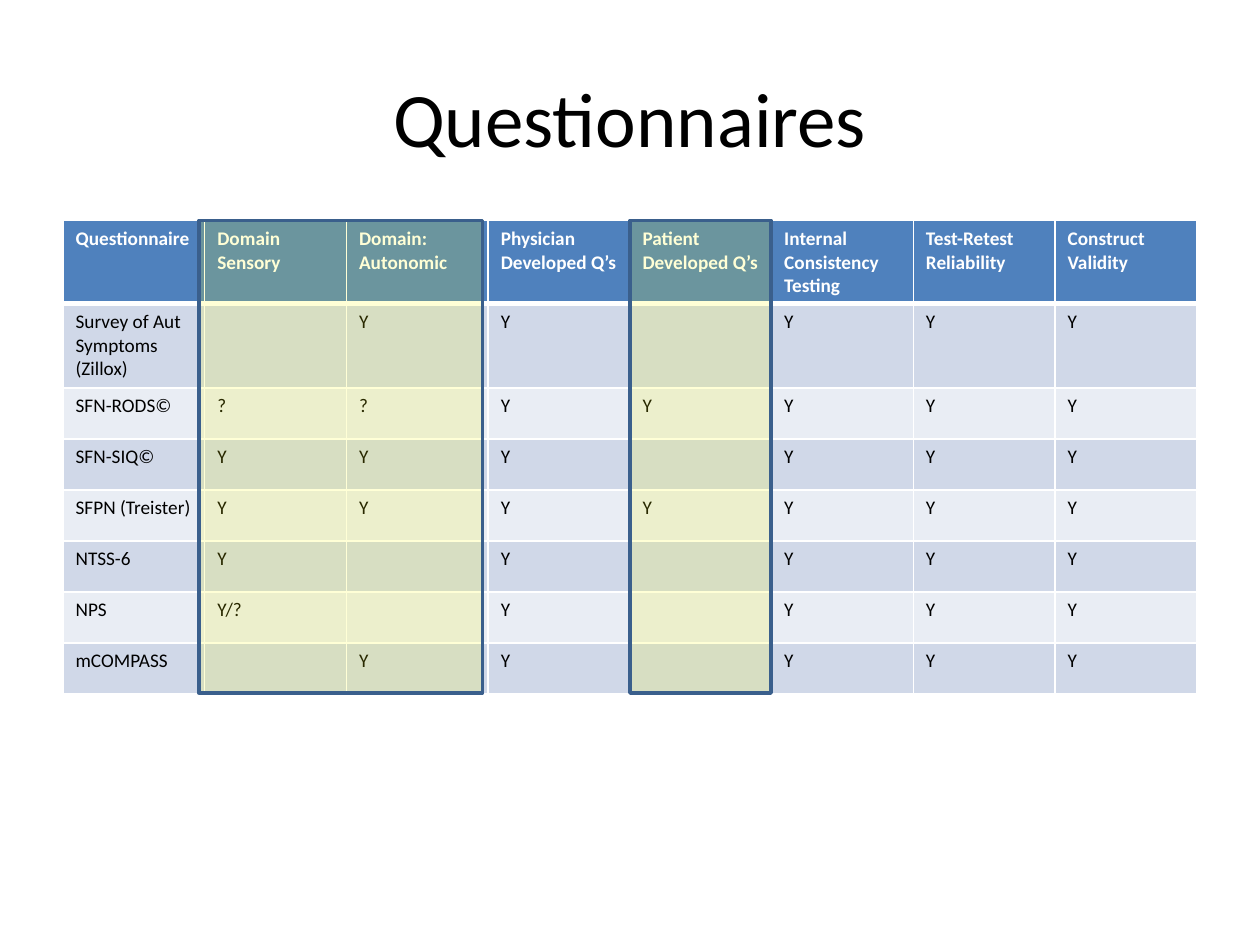
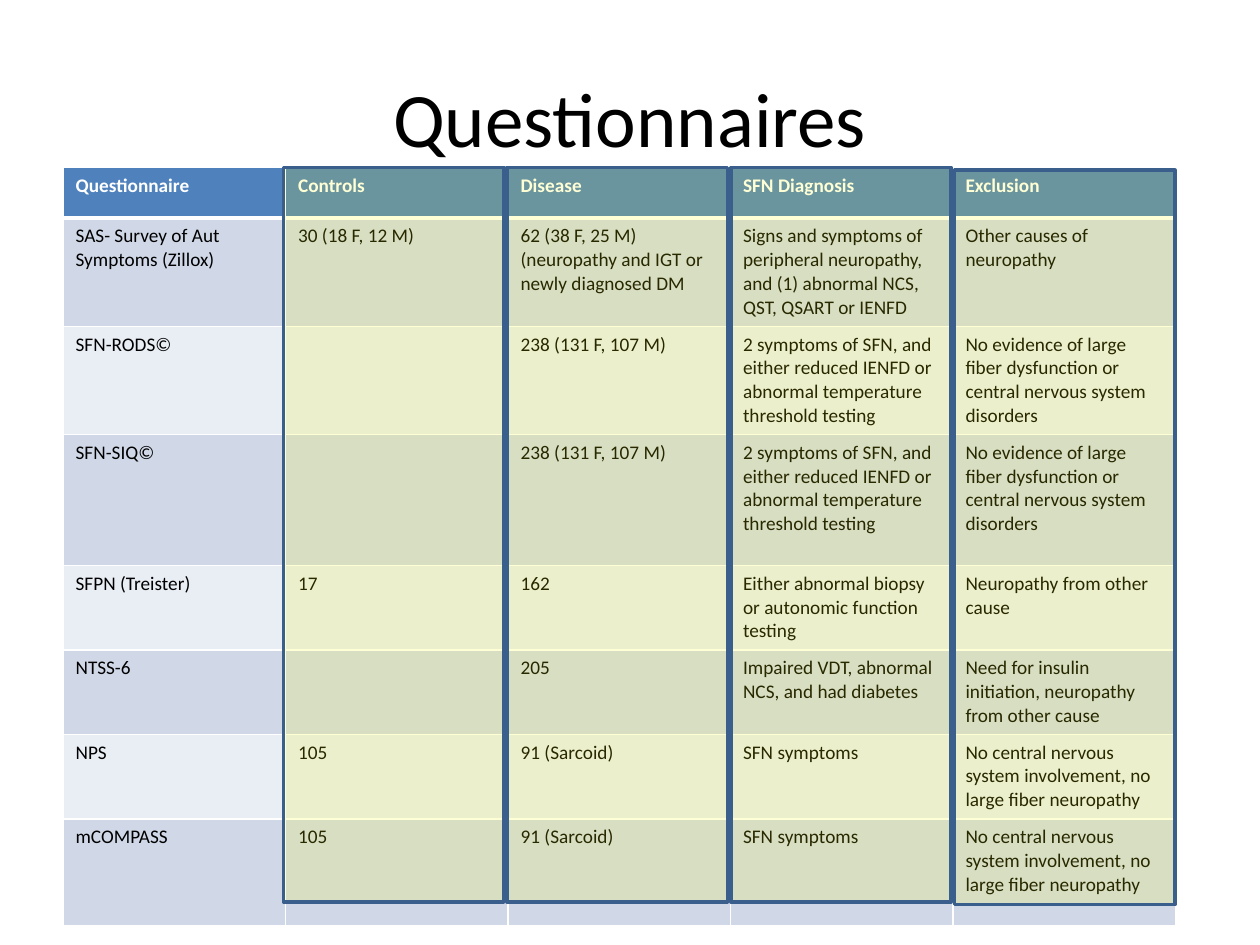
from dataclasses import dataclass

from lxml.etree import SubElement
from pptx import Presentation
from pptx.dml.color import RGBColor
from pptx.enum.shapes import MSO_SHAPE
from pptx.enum.text import MSO_ANCHOR, PP_ALIGN
from pptx.oxml.ns import qn
from pptx.util import Inches, Pt

FONT = "Calibri"
COLORS = {
    "text": "000000",
    "white": "FFFFFF",
    "header": "4F81BD",
    "odd_row": "D0D8E8",
    "even_row": "E9EDF4",
    "highlight": "FFFF00",
    "frame": "3A5F8C",
}
HIGHLIGHT_OPACITY = 16


@dataclass
class Grid:
    top: float
    width: float
    row_heights: list[float]
    rows: list[list[str]]
    left: float = 0.5


@dataclass
class Highlight:
    left: float
    top: float
    width: float
    height: float


def rgb(name: str) -> RGBColor:
    return RGBColor.from_string(COLORS[name])


def style_font(p, size: float, color: str, bold: bool = False) -> None:
    p.font.name = FONT
    p.font.size = Pt(size)
    p.font.bold = bold
    p.font.color.rgb = rgb(color)


def add_title(s, text: str) -> None:
    box = s.shapes.add_textbox(Inches(0.5), Inches(0.3), Inches(9), Inches(1.25))
    tf = box.text_frame
    tf.word_wrap = True
    tf.vertical_anchor = MSO_ANCHOR.MIDDLE
    p = tf.paragraphs[0]
    p.text = text
    p.alignment = PP_ALIGN.CENTER
    style_font(p, 44, "text")


def set_borders(cell, top: float, bottom: float) -> None:
    """Give the cell white borders, 1 pt at the sides; call before filling it."""
    tc_pr = cell._tc.get_or_add_tcPr()
    for side, width in {"L": 1, "R": 1, "T": top, "B": bottom}.items():
        ln = SubElement(tc_pr, qn(f"a:ln{side}"), w=str(Pt(width)))
        fill = SubElement(ln, qn("a:solidFill"))
        SubElement(fill, qn("a:srgbClr"), val=COLORS["white"])


def add_grid(s, grid: Grid) -> None:
    n_cols = len(grid.rows[0])
    frame = s.shapes.add_table(
        len(grid.rows), n_cols, Inches(grid.left), Inches(grid.top),
        Inches(grid.width), Inches(sum(grid.row_heights)))
    table = frame.table
    for column in table.columns:
        column.width = Inches(grid.width / n_cols)
    for i, (height, texts) in enumerate(zip(grid.row_heights, grid.rows)):
        table.rows[i].height = Inches(height)
        is_header = i == 0
        band = "header" if is_header else "odd_row" if i % 2 else "even_row"
        for j, text in enumerate(texts):
            cell = table.cell(i, j)
            set_borders(cell, top=3 if i == 1 else 1, bottom=3 if is_header else 1)
            cell.fill.solid()
            cell.fill.fore_color.rgb = rgb(band)
            p = cell.text_frame.paragraphs[0]
            p.text = text
            style_font(p, 11, "white" if is_header else "text", is_header)


def add_highlight(s, area: Highlight) -> None:
    sp = s.shapes.add_shape(
        MSO_SHAPE.RECTANGLE, Inches(area.left), Inches(area.top),
        Inches(area.width), Inches(area.height))
    sp.shadow.inherit = False
    sp.fill.solid()
    sp.fill.fore_color.rgb = rgb("highlight")
    color = sp.fill._xPr.find(qn("a:solidFill"))[0]
    SubElement(color, qn("a:alpha"), val=str(HIGHLIGHT_OPACITY * 1000))
    sp.line.color.rgb = rgb("frame")
    sp.line.width = Pt(2)


def add_questionnaire_slide(prs, grid: Grid, highlights: list[Highlight]) -> None:
    s = prs.slides.add_slide(prs.slide_layouts[6])
    add_title(s, "Questionnaires")
    add_grid(s, grid)
    for area in highlights:
        add_highlight(s, area)


SFN_SYMPTOMS = ("2 symptoms of SFN, and either reduced IENFD or "
                "abnormal temperature threshold testing")
NO_LARGE_FIBER = ("No evidence of large fiber dysfunction or "
                  "central nervous system disorders")
NO_CNS = "No central nervous system involvement, no large fiber neuropathy"

PROPERTIES = Grid(
    top=1.75, width=9, row_heights=[0.66, 0.67] + [0.405] * 6,
    rows=[
        ["Questionnaire", "Domain Sensory", "Domain: Autonomic",
         "Physician Developed Q’s", "Patient Developed Q’s",
         "Internal Consistency Testing", "Test-Retest Reliability",
         "Construct Validity"],
        ["Survey of Aut Symptoms (Zillox)", "", "Y", "Y", "", "Y", "Y", "Y"],
        ["SFN-RODS©", "?", "?", "Y", "Y", "Y", "Y", "Y"],
        ["SFN-SIQ©", "Y", "Y", "Y", "", "Y", "Y", "Y"],
        ["SFPN (Treister)", "Y", "Y", "Y", "Y", "Y", "Y", "Y"],
        ["NTSS-6", "Y", "", "Y", "", "Y", "Y", "Y"],
        ["NPS", "Y/?", "", "Y", "", "Y", "Y", "Y"],
        ["mCOMPASS", "", "Y", "Y", "", "Y", "Y", "Y"],
    ])

STUDIES = Grid(
    top=1.33, width=8.83,
    row_heights=[0.4, 0.86, 0.86, 1.04, 0.67, 0.67, 0.67, 0.85],
    rows=[
        ["Questionnaire", "Controls", "Disease", "SFN Diagnosis", "Exclusion"],
        ["SAS- Survey of Aut Symptoms (Zillox)", "30 (18 F, 12 M)",
         "62 (38 F, 25 M) (neuropathy and IGT or newly diagnosed DM",
         "Signs and symptoms of peripheral neuropathy, and (1) abnormal NCS, "
         "QST, QSART or IENFD",
         "Other causes of neuropathy"],
        ["SFN-RODS©", "", "238 (131 F, 107 M)", SFN_SYMPTOMS, NO_LARGE_FIBER],
        ["SFN-SIQ©", "", "238 (131 F, 107 M)", SFN_SYMPTOMS, NO_LARGE_FIBER],
        ["SFPN (Treister)", "17", "162",
         "Either abnormal biopsy or autonomic function testing",
         "Neuropathy from other cause"],
        ["NTSS-6", "", "205", "Impaired VDT, abnormal NCS, and had diabetes",
         "Need for insulin initiation, neuropathy from other cause"],
        ["NPS", "105", "91 (Sarcoid)", "SFN symptoms", NO_CNS],
        ["mCOMPASS", "105", "91 (Sarcoid)", "SFN symptoms", NO_CNS],
    ])


def main() -> None:
    prs = Presentation()
    prs.slide_width, prs.slide_height = Inches(10), Inches(7.5)
    add_questionnaire_slide(prs, PROPERTIES, [
        Highlight(1.58, 1.75, 2.25, 3.75),
        Highlight(5, 1.75, 1.12, 3.75),
    ])
    column_tops = [1.33, 1.33, 1.33, 1.35]
    add_questionnaire_slide(prs, STUDIES, [
        Highlight(2.25 + 1.775 * i, top, 1.75, 5.83)
        for i, top in enumerate(column_tops)
    ])
    prs.save("out.pptx")


if __name__ == "__main__":
    main()
